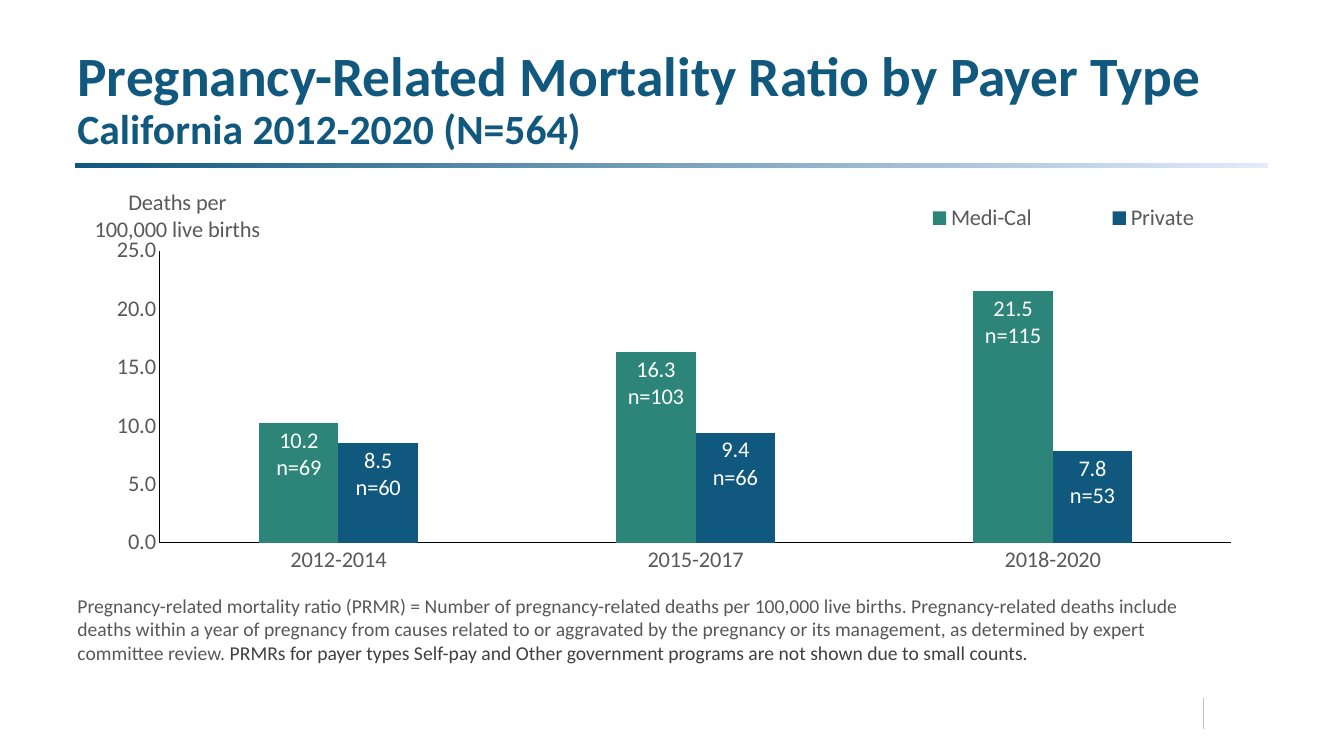
from dataclasses import dataclass

from pptx import Presentation
from pptx.chart.data import CategoryChartData
from pptx.dml.color import RGBColor
from pptx.enum.chart import XL_CHART_TYPE as ChartType
from pptx.enum.chart import XL_LABEL_POSITION as LabelPosition
from pptx.enum.chart import XL_LEGEND_POSITION as LegendPosition
from pptx.enum.chart import XL_TICK_MARK as TickMark
from pptx.enum.shapes import MSO_CONNECTOR as Connector
from pptx.enum.shapes import MSO_SHAPE as Shape
from pptx.enum.text import MSO_ANCHOR as Anchor
from pptx.oxml import parse_xml
from pptx.oxml.ns import nsdecls, qn
from pptx.oxml.xmlchemy import OxmlElement
from pptx.util import Pt

PX = 9144  # EMU in one px, 100 px to the inch


@dataclass(frozen=True)
class Theme:
    font: str = "Calibri"
    navy: str = "10587D"
    teal: str = "2C8578"
    pale: str = "E1EBFB"
    axis_text: str = "595959"
    note_text: str = "585858"
    note_strong: str = "404040"
    tick: str = "BFBFBF"
    black: str = "000000"
    white: str = "FFFFFF"
    title_size: float = 39.6
    subtitle_size: float = 29.7
    chart_size: float = 16
    note_size: float = 14


THEME = Theme()
PERIODS = ["2012-2014", "2015-2017", "2018-2020"]
PAYERS = [
    ("Medi-Cal", THEME.teal, [10.2, 16.3, 21.5], [69, 103, 115]),
    ("Private", THEME.navy, [8.5, 9.4, 7.8], [60, 66, 53]),
]
NOTE = [
    ("Pregnancy-related mortality ratio (PRMR) = Number of pregnancy-related deaths "
     "per 100,000 live births. Pregnancy-related deaths include deaths within a year "
     "of pregnancy from causes related to or aggravated by the pregnancy or its "
     "management, as determined by expert committee review. ", THEME.note_text),
    ("PRMRs for payer types Self-pay and Other government programs are not shown "
     "due to small counts.", THEME.note_strong),
]


def emu(box):
    return [length * PX for length in box]


def style_font(font, size, color, bold=False):
    values = {"name": THEME.font, "size": Pt(size), "bold": bold}
    for name, value in values.items():
        setattr(font, name, value)
    font.color.rgb = RGBColor.from_string(color)


def style_line(line, color, width):
    line.color.rgb = RGBColor.from_string(color)
    line.width = Pt(width)


def add_text_frame(slide, box, anchor):
    frame = slide.shapes.add_textbox(*emu(box)).text_frame
    frame.word_wrap = True
    frame.vertical_anchor = anchor
    return frame


def add_run(para, text, size, color, bold=False):
    span = para.add_run()
    span.text = text
    style_font(span.font, size, color, bold)


def add_heading(slide, box):
    para = add_text_frame(slide, box, Anchor.BOTTOM).paragraphs[0]
    para.line_spacing = 0.9
    add_run(para, "Pregnancy-Related Mortality Ratio by Payer Type",
            THEME.title_size, THEME.navy, True)
    para.add_line_break()
    add_run(para, "California 2012-2020 (N=564)", THEME.subtitle_size, THEME.navy, True)


def add_gradient_rule(slide, box):
    rule = slide.shapes.add_shape(Shape.RECTANGLE, *emu(box))
    rule.shadow.inherit = False
    rule.line.fill.background()
    rule.fill.gradient()
    rule.fill.gradient_angle = 0
    for stop, color in zip(rule.fill.gradient_stops, (THEME.navy, THEME.pale)):
        stop.color.rgb = RGBColor.from_string(color)


def add_footer_tick(slide, box):
    left, top, width, height = emu(box)
    tick = slide.shapes.add_connector(
        Connector.STRAIGHT, left, top, left + width, top + height)
    style_line(tick.line, THEME.tick, 0.5)
    tick._element.spPr.append(OxmlElement("a:effectLst"))


def set_layout(element, after, target="", **fractions):
    """Place a chart part by fractions of the chart, following its child `after`."""
    for old in element.findall(qn("c:layout")):
        element.remove(old)
    parts = f'<c:layoutTarget val="{target}"/>' if target else ""
    parts += "".join(f'<c:{side}Mode val="edge"/>' for side in "xy")
    parts += "".join(f'<c:{side} val="{value}"/>' for side, value in fractions.items())
    layout = parse_xml(f'<c:layout {nsdecls("c")}><c:manualLayout>{parts}'
                       "</c:manualLayout></c:layout>")
    previous = element.find(qn(after)) if after else None
    element.insert(0 if previous is None else element.index(previous) + 1, layout)


def style_axes(chart):
    for axis in (chart.category_axis, chart.value_axis):
        values = {"has_major_gridlines": False, "major_tick_mark": TickMark.NONE,
                  "minor_tick_mark": TickMark.NONE}
        for name, value in values.items():
            setattr(axis, name, value)
        style_line(axis.format.line, THEME.black, 0.75)
        style_font(axis.tick_labels.font, THEME.chart_size, THEME.axis_text)
    scale = {"minimum_scale": 0, "maximum_scale": 25, "major_unit": 5}
    for name, value in scale.items():
        setattr(chart.value_axis, name, value)
    chart.value_axis.tick_labels.number_format = "0.0"
    chart.value_axis.tick_labels.number_format_is_linked = False


def add_axis_title(chart):
    title = chart.value_axis.axis_title
    title.text_frame.text = "Deaths per\n100,000 live births"
    for para in title.text_frame.paragraphs:
        style_font(para.runs[0].font, THEME.chart_size, THEME.axis_text)
    body = title._element.find(".//" + qn("a:bodyPr"))
    body.set("rot", "0")
    body.set("vert", "horz")
    set_layout(title._element, "c:tx", x=0.02, y=0.015)


def add_legend(chart):
    chart.has_legend = True
    legend = chart.legend
    legend.position = LegendPosition.TOP
    legend.include_in_layout = False
    style_font(legend.font, THEME.chart_size, THEME.axis_text)
    set_layout(legend._element, "c:legendPos", x=0.66, y=0.047, w=0.34, h=0.1)


def style_bars(series, color, rates, counts):
    series.format.fill.solid()
    series.format.fill.fore_color.rgb = RGBColor.from_string(color)
    for index, (rate, count) in enumerate(zip(rates, counts)):
        label = series.points[index].data_label
        label.text_frame.text = f"{rate}\nn={count}"
        label.position = LabelPosition.INSIDE_END
        for para in label.text_frame.paragraphs:
            style_font(para.runs[0].font, THEME.chart_size, THEME.white)


def add_ratio_chart(slide, box):
    data = CategoryChartData(number_format="0.0")
    data.categories = PERIODS
    for name, _, rates, _ in PAYERS:
        data.add_series(name, rates)
    chart = slide.shapes.add_chart(ChartType.COLUMN_CLUSTERED, *emu(box), data).chart
    chart.has_title = False
    style_font(chart.font, THEME.chart_size, THEME.black)
    plot = chart.plots[0]
    for name, value in {"gap_width": 250, "overlap": 0, "vary_by_categories": False}.items():
        setattr(plot, name, value)
    for series, (_, color, rates, counts) in zip(plot.series, PAYERS):
        style_bars(series, color, rates, counts)
    style_axes(chart)
    add_axis_title(chart)
    add_legend(chart)
    plot_area = chart._chartSpace.find(".//" + qn("c:plotArea"))
    set_layout(plot_area, None, "inner", x=0.077, y=0.176, w=0.893, h=0.712)


def add_note(slide, box):
    para = add_text_frame(slide, box, Anchor.TOP).paragraphs[0]
    for text, color in NOTE:
        add_run(para, text, THEME.note_size, color)


def main():
    deck = Presentation()
    deck.slide_width, deck.slide_height = emu((1333, 750))
    slide = deck.slides.add_slide(deck.slide_layouts[6])
    add_footer_tick(slide, (1194, 692, 0, 31))
    add_gradient_rule(slide, (74, 162, 1184, 5))
    add_heading(slide, (67, 36, 1200, 121))
    add_note(slide, (67, 584, 1140, 81))
    add_ratio_chart(slide, (67, 177, 1190, 407))
    deck.save("out.pptx")


if __name__ == "__main__":
    main()
